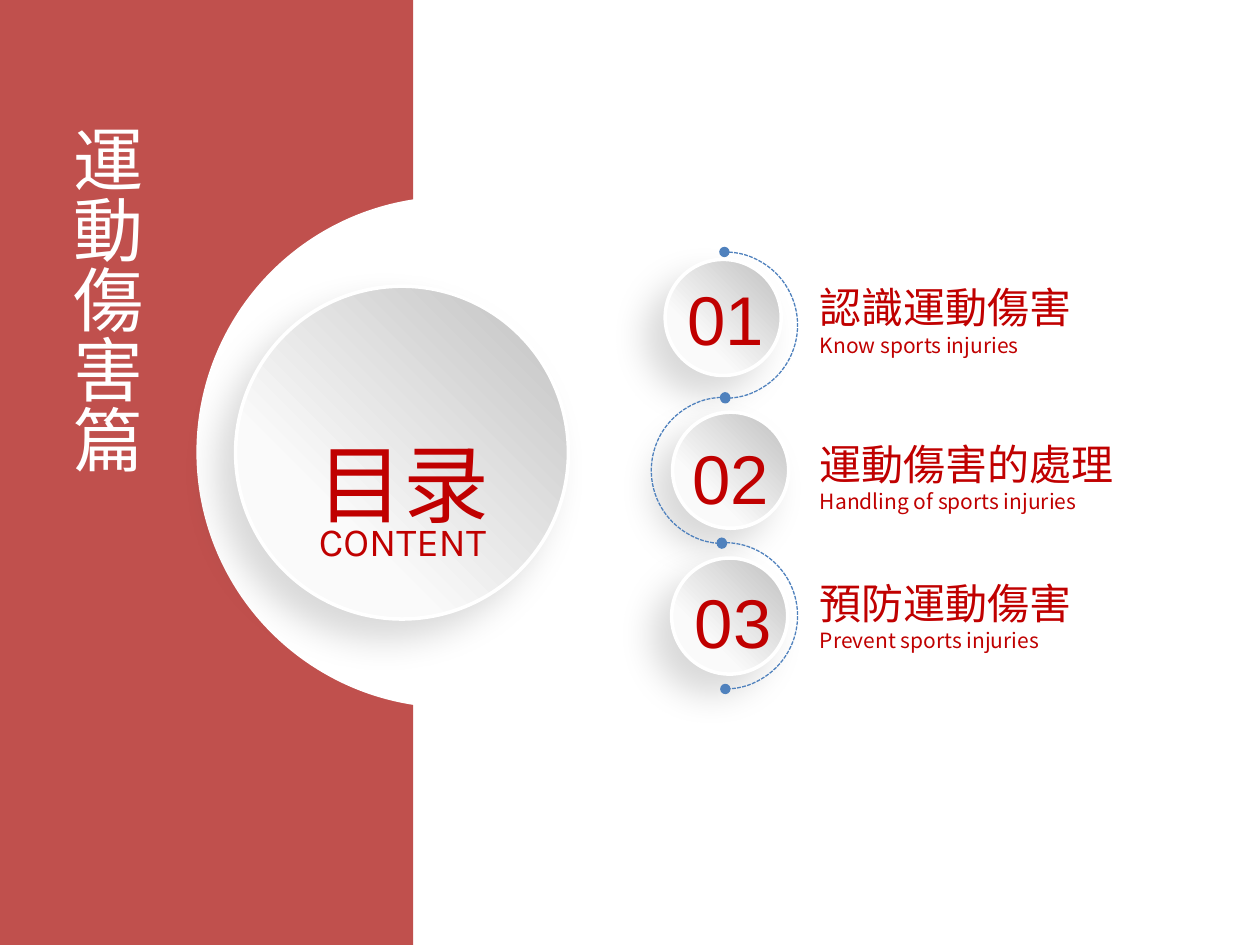
from lxml import etree
from pptx import Presentation
from pptx.dml.color import RGBColor
from pptx.enum.dml import MSO_LINE
from pptx.enum.shapes import MSO_SHAPE
from pptx.enum.text import MSO_ANCHOR, MSO_AUTO_SIZE, PP_ALIGN
from pptx.oxml.ns import qn
from pptx.util import Cm, Pt

RECT, OVAL, ARC = MSO_SHAPE.RECTANGLE, MSO_SHAPE.OVAL, MSO_SHAPE.ARC
CENTER, LEFT, JUSTIFY = PP_ALIGN.CENTER, PP_ALIGN.LEFT, PP_ALIGN.JUSTIFY
TOP, MIDDLE = MSO_ANCHOR.TOP, MSO_ANCHOR.MIDDLE
FIT_SHAPE = MSO_AUTO_SIZE.SHAPE_TO_FIT_TEXT
SHORT_DASH = MSO_LINE.SQUARE_DOT

WHITE = RGBColor(0xFF, 0xFF, 0xFF)
BRICK = RGBColor(0xC0, 0x50, 0x4D)
RED = RGBColor(0xC0, 0x00, 0x00)
BLUE = RGBColor(0x4F, 0x81, 0xBD)
GREY = RGBColor(0xBF, 0xBF, 0xBF)
PALE = RGBColor(0xFA, 0xFA, 0xFA)
CJK, LATIN, DIGITS = "Noto Sans CJK SC", "Karla", "Arial"

# Content; lengths in cm
CHAPTER = "運動傷害篇"
HEADINGS = [  # text, font, size, box
    ("目录", CJK, 84.4, (5.87, 6.76, 4.52, 3.86)),
    ("CONTENT", LATIN, 39.4, (5.97, 9.55, 4.29, 1.73)),
]
TOPICS = [  # number, title, subtitle, ball, number and label positions, label width
    ("01", "認識運動傷害", "Know sports injuries",
     (13.41, 5.23), (13.59, 5.44), (16.28, 5.56), 5.77),
    ("02", "運動傷害的處理", "Handling of sports injuries",
     (13.56, 8.31), (13.69, 8.66), (16.28, 8.71), 6.76),
    ("03", "預防運動傷害", "Prevent sports injuries",
     (13.54, 11.25), (13.74, 11.56), (16.28, 11.51), 5.77),
]
ARC_ANGLES = [(162, 53.57), (161.69, 52.82), (160.73, 53.57)]
ARC_LEFT, ARC_TOP, ARC_SIZE, ARC_STEP = 13.13, 5.08, 2.95, 2.93
BALL_SIZE = 2.34

prs = Presentation()
prs.slide_width, prs.slide_height = Cm(25.4), Cm(19.05)
slide = prs.slides.add_slide(prs.slide_layouts[5])


def add_plain(kind, box, color):
    shape = slide.shapes.add_shape(kind, *map(Cm, box))
    shape.shadow.inherit = False
    shape.fill.solid()
    shape.fill.fore_color.rgb = color
    shape.line.fill.background()
    return shape


def add_ball(left, top, size):
    ball = add_plain(OVAL, (left, top, size, size), WHITE)
    ball.fill.gradient()
    ball.fill.gradient_angle = 225
    for stop, color, position in zip(ball.fill.gradient_stops, (GREY, PALE), (0, 0.7)):
        stop.color.rgb = color
        stop.position = position
    ball.line.color.rgb = WHITE
    ball.line.width = Pt(2)
    # Soft shadow to the lower left
    effects = ball._element.spPr.find(qn("a:effectLst"))
    shadow = etree.SubElement(effects, qn("a:outerShdw"), blurRad=str(Pt(20)),
                              dist=str(Pt(15)), dir="8100000", algn="tr", rotWithShape="0")
    black = etree.SubElement(shadow, qn("a:srgbClr"), val="000000")
    etree.SubElement(black, qn("a:alpha"), val="15000")


def add_arc(index, angles):
    top = ARC_TOP + index * ARC_STEP
    arc = add_plain(ARC, (ARC_LEFT, top, ARC_SIZE, ARC_SIZE), WHITE)
    arc.fill.background()
    arc.adjustments[0], arc.adjustments[1] = angles
    arc.line.color.rgb = BLUE
    arc.line.width = Pt(0.75)
    arc.line.dash_style = SHORT_DASH
    line = arc._element.spPr.find(qn("a:ln"))
    for end in ("a:headEnd", "a:tailEnd"):
        etree.SubElement(line, qn(end), type="oval")
    if index % 2:
        arc._element.spPr.find(qn("a:xfrm")).set("flipH", "1")


def write(holder, lines, color, align, anchor=TOP, wrap=True, spacing=None):
    """Fill a text holder; each line is (text, font, size). Returns its runs."""
    frame = holder.text_frame
    frame.word_wrap = wrap
    frame.auto_size = FIT_SHAPE
    frame.vertical_anchor = anchor
    runs = []
    for i, (text, font, size) in enumerate(lines):
        paragraph = frame.add_paragraph() if i else frame.paragraphs[0]
        paragraph.alignment = align
        if spacing:
            paragraph.line_spacing = spacing
        run = paragraph.add_run()
        run.text = text
        run.font.name, run.font.size = font, Pt(size)
        run.font.color.rgb = color
        etree.SubElement(run.font._element, qn("a:ea"), typeface=font)
        runs.append(run)
    return runs


def add_text(box, *args, **options):
    return write(slide.shapes.add_textbox(*map(Cm, box)), *args, **options)


# Left panel with the round cut-out and the large disc
add_plain(RECT, (0, 0, 8.33, 19.05), BRICK)
add_plain(OVAL, (3.96, 3.96, 10.31, 10.31), WHITE)
add_ball(4.75, 5.77, 6.71)
for text, font, size, box in HEADINGS:
    for run in add_text(box, [(text, font, size)], RED, CENTER, MIDDLE,
                        wrap=False, spacing=1.5):
        run.font._element.set("baseline", "12000")

# Numbered topics
for number, title, subtitle, ball, digits, label, width in TOPICS:
    add_ball(*ball, BALL_SIZE)
    add_text((*digits, 2.08, 1.93), [(number, DIGITS, 39.4)], RED, CENTER, MIDDLE, wrap=False)
    add_text((*label, width, 1.8), [(title, CJK, 24), (subtitle, CJK, 12)], RED, LEFT)

# Dashed winding path
for index, angles in enumerate(ARC_ANGLES):
    add_arc(index, angles)

# Vertical chapter title, brought in front of the panel
chapter = slide.shapes.title
chapter.left, chapter.top, chapter.width, chapter.height = map(Cm, (0.99, 2.39, 2.24, 13.11))
write(chapter, [(CHAPTER, CJK, 40)], WHITE, JUSTIFY)
chapter.text_frame._txBody.find(qn("a:bodyPr")).set("vert", "eaVert")
slide.shapes._spTree.append(chapter._element)

prs.save("out.pptx")
